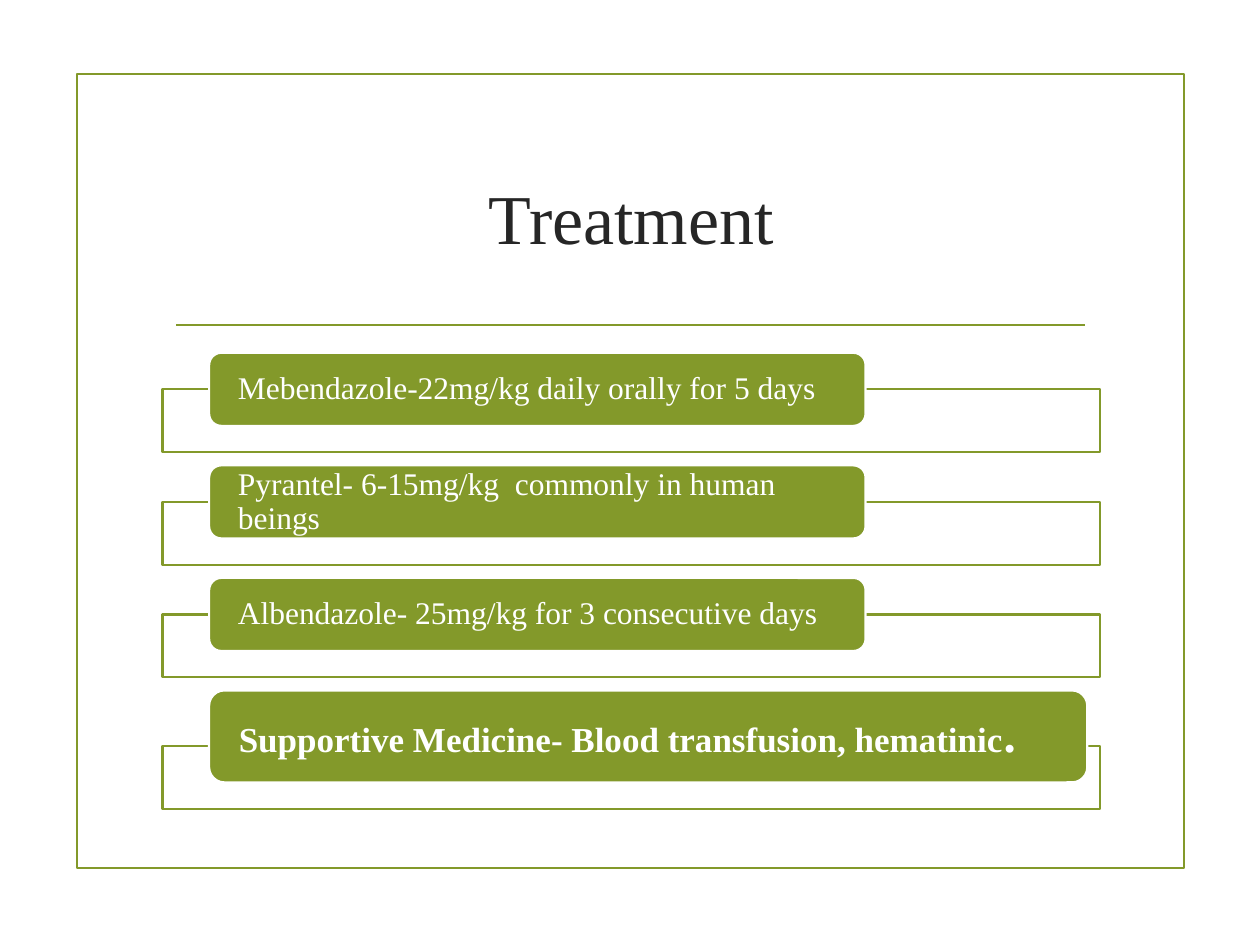
from pptx import Presentation
from pptx.dml.color import RGBColor
from pptx.enum.shapes import MSO_CONNECTOR, MSO_SHAPE
from pptx.enum.text import MSO_ANCHOR, PP_ALIGN
from pptx.oxml.ns import qn
from pptx.util import Inches, Pt
from lxml import etree

RECTANGLE = MSO_SHAPE.RECTANGLE
ROUNDED = MSO_SHAPE.ROUNDED_RECTANGLE
STRAIGHT = MSO_CONNECTOR.STRAIGHT
MIDDLE = MSO_ANCHOR.MIDDLE
LEFT, CENTER = PP_ALIGN.LEFT, PP_ALIGN.CENTER

OLIVE = RGBColor(0x83, 0x99, 0x2A)
WHITE = RGBColor(0xFF, 0xFF, 0xFF)
CHARCOAL = RGBColor(0x26, 0x26, 0x26)
FONT = "Times New Roman"
LINE_WIDTH = Pt(1.25)

FIRST_TOP, LAST_TOP = 2.8, 5.48
FRAME_OVERLAP = 0.29

SHORT_LABEL = (5.21, 0.58)
LONG_LABEL = (6.97, 0.73)
TREATMENTS = [
    ([("Mebendazole-22mg/kg daily orally for 5 days", 18)], False, SHORT_LABEL),
    ([("Pyrantel- 6-15mg/kg  commonly in human beings", 18)], False, SHORT_LABEL),
    ([("Albendazole- 25mg/kg for 3 consecutive days", 18)], False, SHORT_LABEL),
    ([("Supportive Medicine- Blood transfusion, hematinic", 20), (".", 28)],
     True, LONG_LABEL),
]


def write_text(holder, pieces, color, align=LEFT, bold=False, spacing=1.0,
               side_inset=0.1, end_inset=0.05):
    frame = holder.text_frame
    frame.word_wrap = True
    frame.vertical_anchor = MIDDLE
    frame.margin_left = frame.margin_right = Inches(side_inset)
    frame.margin_top = frame.margin_bottom = Inches(end_inset)
    paragraph = frame.paragraphs[0]
    paragraph.alignment = align
    paragraph.line_spacing = spacing
    for wording, size in pieces:
        run = paragraph.add_run()
        run.text = wording
        run.font.name = FONT
        run.font.size = Pt(size)
        run.font.bold = bold
        run.font.color.rgb = color


def add_panel(slide, preset, left, top, width, height, line, fill=None):
    panel = slide.shapes.add_shape(
        preset, Inches(left), Inches(top), Inches(width), Inches(height))
    panel.shadow.inherit = False
    if fill is None:
        panel.fill.background()
    else:
        panel.fill.solid()
        panel.fill.fore_color.rgb = fill
    panel.line.color.rgb = line
    panel.line.width = LINE_WIDTH
    return panel


def add_divider(slide, left, right, y):
    divider = slide.shapes.add_connector(
        STRAIGHT, Inches(left), Inches(y), Inches(right), Inches(y))
    divider.line.color.rgb = OLIVE
    divider.line.width = LINE_WIDTH
    etree.SubElement(divider._element.spPr, qn("a:effectLst"))


def add_title(slide, wording):
    title = slide.shapes.add_textbox(
        Inches(1.29), Inches(1), Inches(7.44), Inches(1.43))
    write_text(title, [(wording, 40)], CHARCOAL, align=CENTER)


def add_treatment(slide, top, pieces, bold, label_size):
    width, height = label_size
    frame_top = top + height - FRAME_OVERLAP
    add_panel(slide, RECTANGLE, 1.29, frame_top, 7.44, 0.5, OLIVE, WHITE)
    label = add_panel(slide, ROUNDED, 1.66, top, width, height, WHITE, OLIVE)
    write_text(label, pieces, WHITE, bold=bold, spacing=0.9,
               side_inset=0.2, end_inset=0)


def main():
    deck = Presentation()
    deck.slide_width, deck.slide_height = Inches(10), Inches(7.5)
    slide = deck.slides.add_slide(deck.slide_layouts[6])
    add_panel(slide, RECTANGLE, 0.61, 0.59, 8.79, 6.3, OLIVE)
    add_divider(slide, 1.4, 8.61, 2.58)
    add_title(slide, "Treatment")
    pitch = (LAST_TOP - FIRST_TOP) / (len(TREATMENTS) - 1)
    for index, (pieces, bold, label_size) in enumerate(TREATMENTS):
        add_treatment(slide, FIRST_TOP + index * pitch, pieces, bold, label_size)
    deck.save("out.pptx")


if __name__ == "__main__":
    main()
